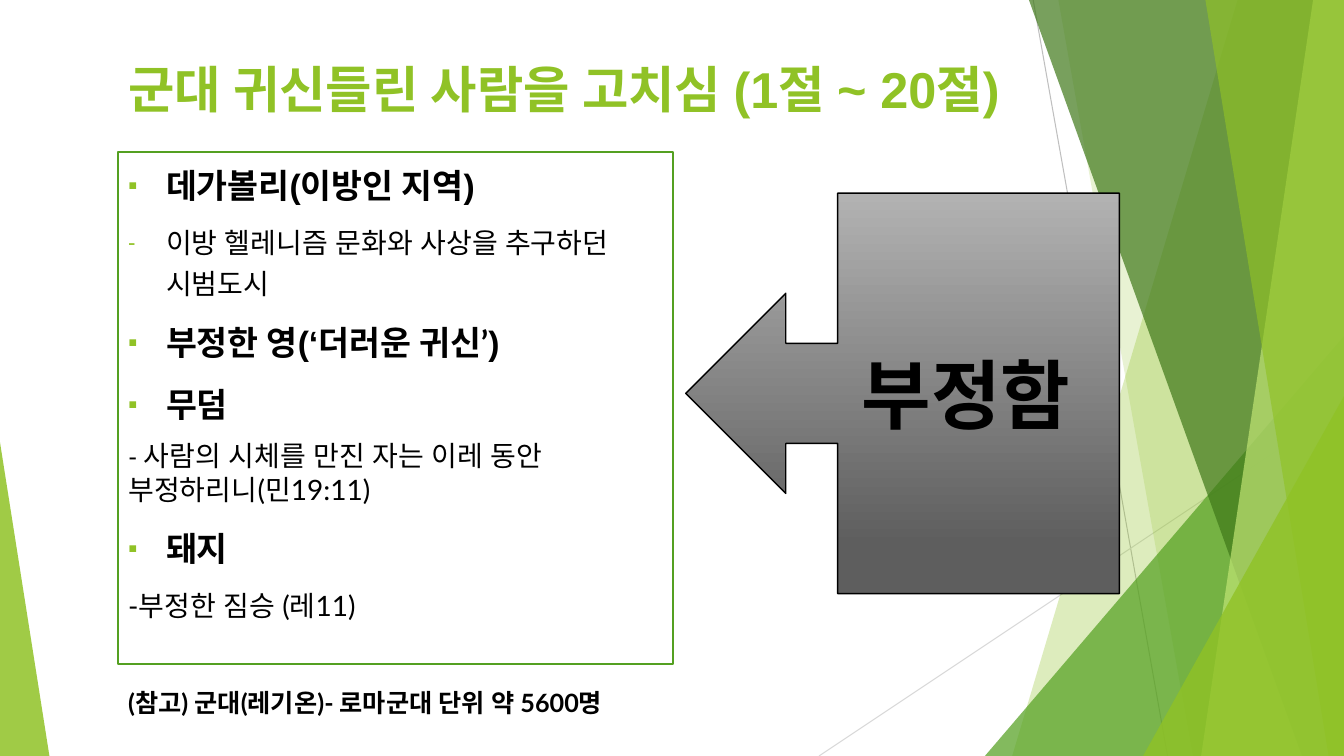
from lxml import etree
from pptx import Presentation
from pptx import util as u
from pptx.dml.color import RGBColor
from pptx.enum import shapes, text
from pptx.oxml.ns import qn

LIME, GREEN, BLACK = "90C226", "54A021", "000000"
EAST_ASIAN_FONT = "Lato"
WIDTH, HEIGHT = 960, 540
INDENT = 27


def color(value):
    return RGBColor.from_string(value)


def points(*values):
    return [u.Pt(value) for value in values]


def apply(target, formats):
    for name, value in formats.items():
        setattr(target, name, value)


def paint(shape, fill, opacity=100, line=None, weight=1):
    """Solid fill with opacity in percent, and an optional outline."""
    shape.shadow.inherit = False
    shape.fill.solid()
    shape.fill.fore_color.rgb = color(fill)
    if opacity < 100:
        solid = shape._element.spPr.find(qn("a:solidFill"))
        etree.SubElement(solid[0], qn("a:alpha"), val=str(opacity * 1000))
    outline(shape, line, weight)


def outline(shape, line, weight):
    if line:
        shape.line.color.rgb = color(line)
        shape.line.width = u.Pt(weight)
    else:
        shape.line.fill.background()


def add_hairline(slide, start, end, line):
    connector = slide.shapes.add_connector(
        shapes.MSO_CONNECTOR.STRAIGHT, *points(*start, *end))
    outline(connector, line, 0.75)
    etree.SubElement(connector._element.spPr, qn("a:effectLst"))


def add_band(slide, top_left, bottom_left, fill, opacity):
    """Band from a slanted left edge to the right edge of the slide."""
    builder = slide.shapes.build_freeform(top_left, 0, scale=u.Pt(1))
    builder.add_line_segments(
        [(WIDTH, 0), (WIDTH, HEIGHT), (bottom_left, HEIGHT)], close=True)
    paint(builder.convert_to_shape(), fill, opacity)


def add_corner(slide, left, top, width, apex, fill, opacity):
    """Right triangle standing on the bottom of the slide."""
    triangle = slide.shapes.add_shape(
        shapes.MSO_SHAPE.ISOSCELES_TRIANGLE,
        *points(left, top, width, HEIGHT - top))
    triangle.adjustments[0] = apex
    paint(triangle, fill, opacity)


def add_run(paragraph, words, size, font="Lato", bold=False, ink=BLACK):
    run = paragraph.add_run()
    run.text = words
    apply(run.font, {"size": u.Pt(size), "name": font, "bold": bold})
    run.font.color.rgb = color(ink)
    etree.SubElement(run.font._element, qn("a:ea"), typeface=EAST_ASIAN_FONT)


def add_bullet(paragraph, character):
    properties = paragraph._p.get_or_add_pPr()
    properties.set("marL", str(u.Pt(INDENT)))
    properties.set("indent", str(-u.Pt(INDENT)))
    bullet_color = etree.SubElement(properties, qn("a:buClr"))
    etree.SubElement(bullet_color, qn("a:srgbClr"), val=LIME)
    etree.SubElement(properties, qn("a:buSzPct"), val="80000")
    etree.SubElement(properties, qn("a:buFont"), typeface="Arial")
    etree.SubElement(properties, qn("a:buChar"), char=character)


def set_frame(shape, anchor=text.MSO_ANCHOR.TOP):
    frame = shape.text_frame
    apply(frame, {"word_wrap": True, "vertical_anchor": anchor})
    return frame


def add_label(slide, box, runs):
    frame = set_frame(slide.shapes.add_textbox(*points(*box)))
    for run in runs:
        add_run(frame.paragraphs[0], **run)


def add_list(slide, box, items):
    panel = slide.shapes.add_shape(shapes.MSO_SHAPE.RECTANGLE, *points(*box))
    paint(panel, "FFFFFF", line=GREEN, weight=1.5)
    frame = set_frame(panel)
    for index, (bullet, spacing, runs) in enumerate(items):
        paragraph = frame.add_paragraph() if index else frame.paragraphs[0]
        apply(paragraph, {"alignment": text.PP_ALIGN.LEFT,
                          "line_spacing": spacing, "space_before": u.Pt(10)})
        if bullet:
            add_bullet(paragraph, bullet)
        for run in runs:
            add_run(paragraph, *run)


def add_callout(slide, box, runs):
    callout = slide.shapes.add_shape(
        shapes.MSO_SHAPE.LEFT_ARROW_CALLOUT, *points(*box))
    callout.shadow.inherit = False
    callout.fill.gradient()
    callout.fill.gradient_angle = 270
    stops = callout.fill.gradient_stops
    for stop, position, shade in zip(stops, (0, 0.88), ("B2B2B2", "5E5E5E")):
        stop.position = position
        stop.color.rgb = color(shade)
    outline(callout, BLACK, 1)
    frame = set_frame(callout, text.MSO_ANCHOR.MIDDLE)
    frame.paragraphs[0].alignment = text.PP_ALIGN.CENTER
    for run in runs:
        add_run(frame.paragraphs[0], *run)


def add_backdrop(slide):
    add_hairline(slide, (738, 0), (834, HEIGHT), "BFBFBF")
    add_hairline(slide, (WIDTH, 290), (585, HEIGHT), "D9D9D9")
    add_band(slide, 884, 723, LIME, 30)
    add_band(slide, 756, 852, LIME, 20)
    add_corner(slide, 703.5, 240, 256.5, 1, GREEN, 72)
    add_band(slide, 735, 929.5, "3F7819", 70)
    add_band(slide, 938, 858, "C0E474", 70)
    add_band(slide, 861, 949, LIME, 65)
    add_corner(slide, 816.5, 283, 143.5, 1, LIME, 80)
    add_corner(slide, 0, 316, 35.3, 0, LIME, 85)


def main():
    presentation = Presentation()
    apply(presentation, {"slide_width": u.Pt(WIDTH),
                         "slide_height": u.Pt(HEIGHT)})
    slide = presentation.slides.add_slide(presentation.slide_layouts[6])
    add_backdrop(slide)

    # Title
    heading = {"size": 36, "bold": True, "ink": LIME}
    add_label(slide, (84.5, 38, 792, 102), [
        {"words": "군대 귀신들린 사람을 고치심", **heading},
        {"words": " (1절 ~ 20절)", "font": "Arial", **heading}])

    # Key points
    add_list(slide, (84.5, 108.5, 396, 366), [
        ("▪", 1.2, [("데가볼리(이방인 지역)", 24, "Arial", True)]),
        ("-", 1.2, [("이방 헬레니즘 문화와 사상을 추구하던 시범도시", 20)]),
        ("▪", 1.2, [("부정한 영(‘더러운 귀신’)", 24, "Arial", True)]),
        ("▪", 1.2, [("무덤", 24, "Arial", True)]),
        (None, 1.0, [("- ", 18),
                     ("사람의 시체를 만진 자는 이레 동안 부정하리니(민19:11)", 20)]),
        ("▪", 1.2, [("돼지", 24, "Noto Sans CJK KR", True)]),
        (None, 1.2, [("-부정한 짐승 (레11)", 20)])])

    # Conclusion and footnote
    add_callout(slide, (489.8, 138, 309.8, 286),
                [("부정함 ", 54, "Lato", True), (" ", 18)])
    add_label(slide, (84.5, 487.5, 391.5, 29), [
        {"words": "(참고) 군대(레기온)- 로마군대 단위 약 5600명",
         "size": 18, "bold": True}])

    presentation.save("out.pptx")


if __name__ == "__main__":
    main()
